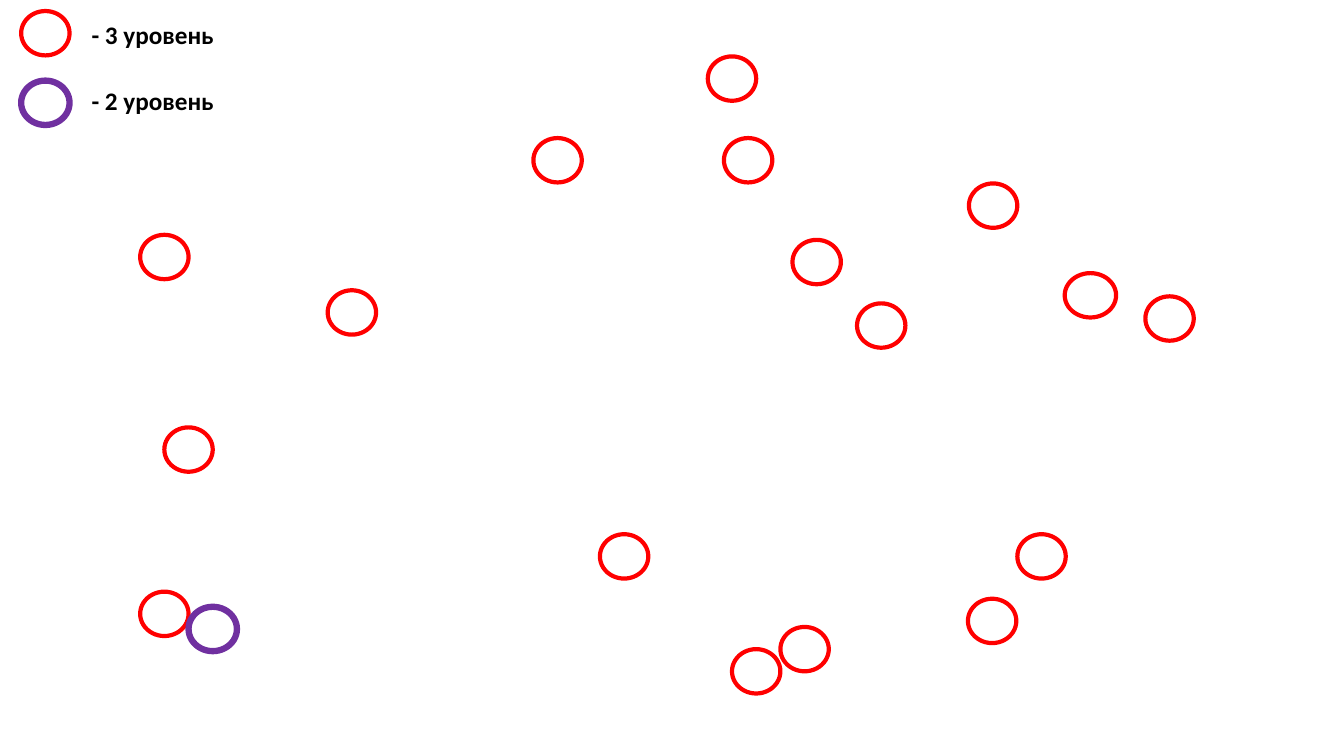
from pptx import Presentation
from pptx import util as u
from pptx.dml.color import RGBColor
from pptx.enum import shapes, text

PX = u.Inches(1) // 100
RED, PURPLE, BLACK = "FF0000", "7030A0", "000000"

# Left and top of each marker
LEVEL_3 = [
    (850, 301), (139, 233), (726, 644), (595, 530), (774, 622),
    (325, 288), (960, 594), (718, 137), (529, 137), (1009, 530),
    (702, 56), (139, 587), (163, 424), (961, 182), (786, 238), (1136, 294),
]
LEVEL_3_WIDE = (1056, 271)
LEVEL_2 = (187, 602)


def color(hex_code):
    return RGBColor.from_string(hex_code)


class LevelMap:
    """Holds the style and the slide that is being drawn."""

    font = "Calibri"
    marker_size = (48, 44)
    label_size = (211, 40)

    def __init__(self, slide):
        self.slide = slide

    def marker(self, left, top, line=RED, weight=3, width=None):
        default_width, height = self.marker_size
        box = (left, top, width or default_width, height)
        ring = self.slide.shapes.add_shape(
            shapes.MSO_SHAPE.OVAL, *(n * PX for n in box))
        ring.shadow.inherit = False
        ring.fill.background()
        ring.line.color.rgb = color(line)
        ring.line.width = u.Pt(weight)

    def label(self, left, top, wording, size=18, bold=True, ink=BLACK):
        box = (left, top, *self.label_size)
        frame = self.slide.shapes.add_textbox(*(n * PX for n in box)).text_frame
        frame.word_wrap = True
        frame.auto_size = text.MSO_AUTO_SIZE.SHAPE_TO_FIT_TEXT
        run = frame.paragraphs[0].add_run()
        run.text = wording
        run.font.name = self.font
        run.font.size = u.Pt(size)
        run.font.bold = bold
        run.font.color.rgb = color(ink)


def main():
    deck = Presentation()
    deck.slide_width, deck.slide_height = u.Inches(13.33), u.Inches(7.5)
    blank = deck.slide_layouts[6]
    level_map = LevelMap(deck.slides.add_slide(blank))

    for left, top in LEVEL_3:
        level_map.marker(left, top)
    level_map.marker(*LEVEL_3_WIDE, width=51)
    level_map.marker(*LEVEL_2, line=PURPLE, weight=4.5)

    legend = [
        ("- 3 уровень", 11, 14, RED, 3),
        ("- 2 уровень", 80, 80, PURPLE, 4.5),
    ]
    for wording, marker_top, label_top, line, weight in legend:
        level_map.marker(21, marker_top, line=line, weight=weight)
        level_map.label(81, label_top, wording)

    deck.save("out.pptx")


if __name__ == "__main__":
    main()
